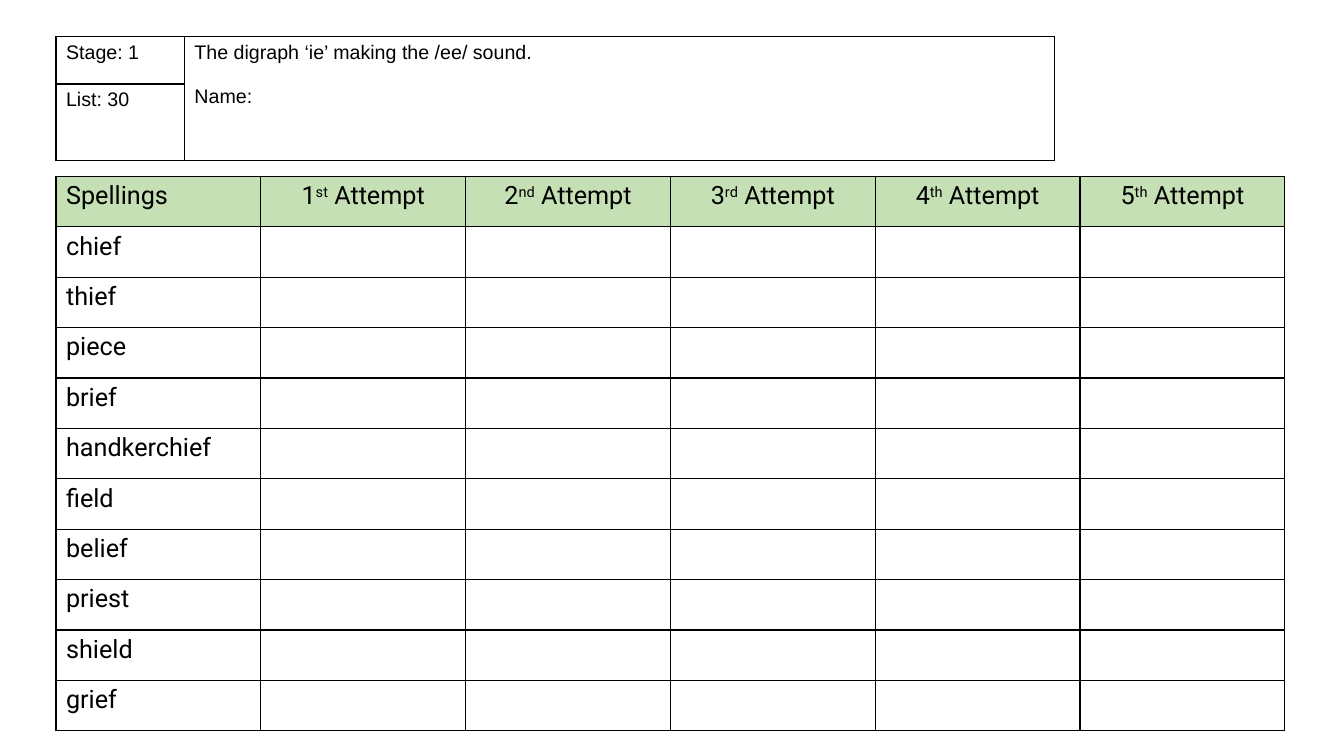
from lxml.etree import SubElement
from pptx import Presentation
from pptx.dml.color import RGBColor
from pptx.enum.text import PP_ALIGN
from pptx.oxml import parse_xml
from pptx.oxml.ns import nsdecls
from pptx.util import Pt


def color(value):
    return RGBColor.from_string(value)


class SpellingSheet:
    ink = "000000"
    header_fill = "C5E0B4"
    border_width = 1

    def __init__(self, presentation):
        self.slide = presentation.slides.add_slide(presentation.slide_layouts[6])

    def table(self, left, top, column_widths, row_heights):
        shape = self.slide.shapes.add_table(
            len(row_heights), len(column_widths), Pt(left), Pt(top),
            Pt(sum(column_widths)), Pt(sum(row_heights)))
        table = shape.table
        table.first_row = False
        table.horz_banding = False
        for column, width in zip(table.columns, column_widths):
            column.width = Pt(width)
        for row, height in zip(table.rows, row_heights):
            row.height = Pt(height)
        for cell in table.iter_cells():
            cell.fill.background()
            self.borders(cell)
        return table

    def borders(self, cell):
        properties = cell._tc.get_or_add_tcPr()
        for index, side in enumerate(("lnL", "lnR", "lnT", "lnB")):
            line = parse_xml(f'<a:{side} {nsdecls("a")} w="{Pt(self.border_width)}"/>')
            fill = SubElement(line, line.tag.replace(side, "solidFill"))
            SubElement(fill, line.tag.replace(side, "srgbClr"), val=self.ink)
            properties.insert(index, line)

    def style(self, paragraph, font_name, size, alignment=PP_ALIGN.LEFT):
        paragraph.alignment = alignment
        paragraph.font.name = font_name
        paragraph.font.size = Pt(size)
        paragraph.font.color.rgb = color(self.ink)

    def text(self, cell, lines, font_name, size, gap=0):
        cell.text = "\n".join(lines)
        for index, paragraph in enumerate(cell.text_frame.paragraphs):
            if index:
                paragraph.space_before = Pt(gap)
            self.style(paragraph, font_name, size)

    def attempt_heading(self, cell, number, suffix):
        paragraph = cell.text_frame.paragraphs[0]
        self.style(paragraph, "Roboto", 18, PP_ALIGN.CENTER)
        for part in (str(number), suffix, " Attempt"):
            run = paragraph.add_run()
            run.text = part
            if part == suffix:
                run._r.get_or_add_rPr().set("baseline", "30000")

    def shade(self, cell):
        cell.fill.solid()
        cell.fill.fore_color.rgb = color(self.header_fill)


def main():
    presentation = Presentation()
    presentation.slide_width = Pt(960)
    presentation.slide_height = Pt(540)
    sheet = SpellingSheet(presentation)

    words = ["Spellings", "chief", "thief", "piece", "brief", "handkerchief",
             "field", "belief", "priest", "shield", "grief"]
    suffixes = ["st", "nd", "rd", "th", "th"]
    spellings = sheet.table(40, 126, [146.3] * (len(suffixes) + 1), [36] * len(words))
    for row, word in enumerate(words):
        sheet.text(spellings.cell(row, 0), [word], "Roboto", 18)
    for number, suffix in enumerate(suffixes, 1):
        sheet.attempt_heading(spellings.cell(0, number), number, suffix)
    for column in range(len(suffixes) + 1):
        sheet.shade(spellings.cell(0, column))

    details = sheet.table(40, 26, [91.7, 621.3], [34, 34])
    details.cell(0, 1).merge(details.cell(1, 1))
    sheet.text(details.cell(0, 0), ["Stage: 1"], "Arial", 14)
    sheet.text(details.cell(1, 0), ["List: 30"], "Arial", 14)
    sheet.text(details.cell(0, 1),
               ["The digraph ‘ie’ making the /ee/ sound.", "Name:"], "Arial", 14, 16)

    presentation.save("out.pptx")


if __name__ == "__main__":
    main()
